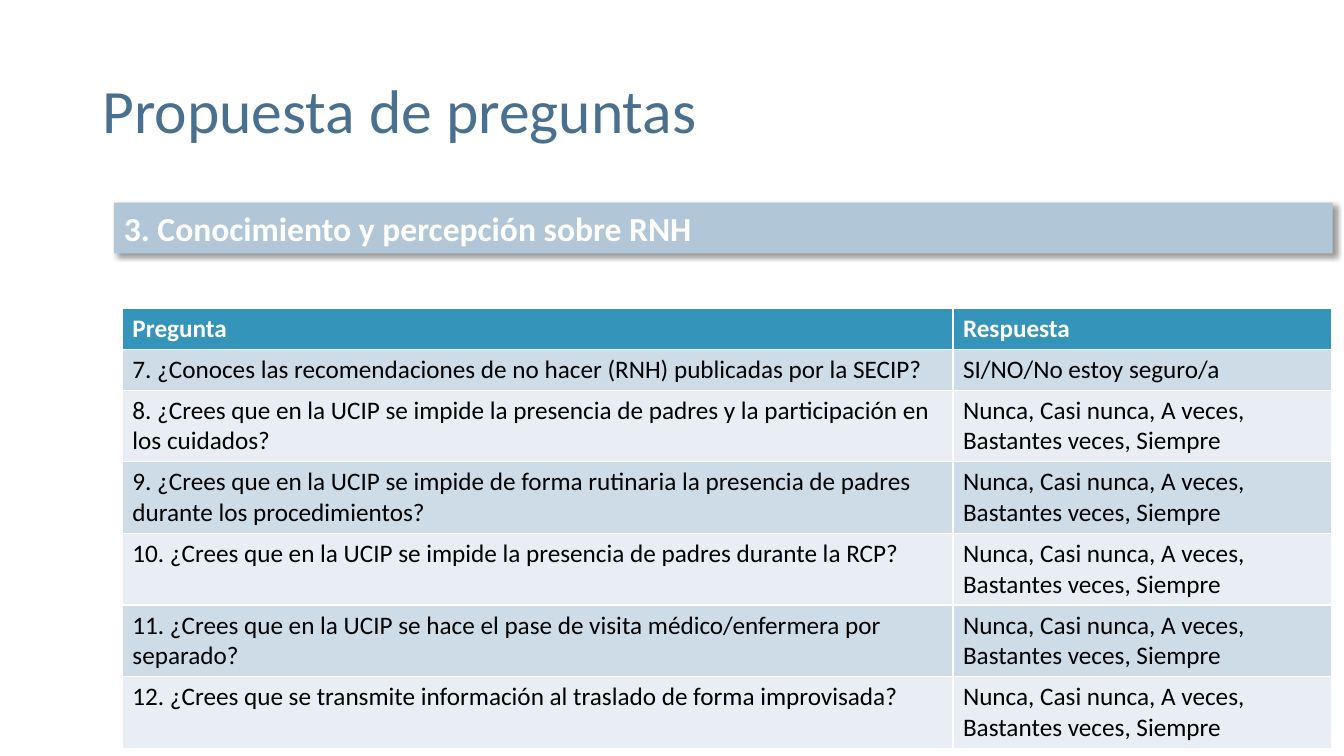
from lxml.etree import SubElement
from pptx import Presentation
from pptx.dml.color import RGBColor
from pptx.enum.shapes import MSO_SHAPE
from pptx.enum.text import MSO_ANCHOR, PP_ALIGN
from pptx.oxml.ns import qn
from pptx.util import Pt

WHITE = "FFFFFF"
BLACK = "000000"
TITLE_BLUE = "4A7090"
BAR_BLUE = "B1C6D7"
HEADER_BLUE = "3494BA"
ROW_FILLS = ("CEDCE7", "E8EEF3")

FREQUENCY = "Nunca, Casi nunca, A veces, Bastantes veces, Siempre"
HEADINGS = ("Pregunta", "Respuesta")
QUESTIONS = [
    ("¿Conoces las recomendaciones de no hacer (RNH) publicadas por la SECIP?", "SI/NO/No estoy seguro/a"),
    ("¿Crees que en la UCIP se impide la presencia de padres y la participación en los cuidados?", FREQUENCY),
    ("¿Crees que en la UCIP se impide de forma rutinaria la presencia de padres durante los procedimientos?", FREQUENCY),
    ("¿Crees que en la UCIP se impide la presencia de padres durante la RCP?", FREQUENCY),
    ("¿Crees que en la UCIP se hace el pase de visita médico/enfermera por separado?", FREQUENCY),
    ("¿Crees que se transmite información al traslado de forma improvisada?", FREQUENCY),
]
FIRST_NUMBER = 7


def color(value):
    return RGBColor.from_string(value)


def fill_solid(target, value):
    target.fill.solid()
    target.fill.fore_color.rgb = color(value)


def write_text(text_frame, text, size=18, text_color=BLACK, bold=False, line_spacing=1.0):
    paragraph = text_frame.paragraphs[0]
    paragraph.alignment = PP_ALIGN.LEFT
    paragraph.line_spacing = line_spacing
    run = paragraph.add_run()
    run.text = text
    run.font.name = "Calibri"
    run.font.size = Pt(size)
    run.font.bold = bold
    run.font.color.rgb = color(text_color)


def add_outer_shadow(shape, blur, distance, degrees, opacity):
    shape.shadow.inherit = False
    effects = shape.element.spPr.find(qn("a:effectLst"))
    shadow = SubElement(
        effects, qn("a:outerShdw"), blurRad=str(Pt(blur)), dist=str(Pt(distance)),
        dir=str(degrees * 60000), algn="tl", rotWithShape="0",
    )
    shadow_color = SubElement(shadow, qn("a:srgbClr"), val=BLACK)
    SubElement(shadow_color, qn("a:alpha"), val=str(opacity * 1000))


def place_title(slide, left, top, width, height):
    title = slide.shapes.title
    title.left, title.top, title.width, title.height = Pt(left), Pt(top), Pt(width), Pt(height)
    title.text_frame.vertical_anchor = MSO_ANCHOR.MIDDLE
    write_text(title.text_frame, "Propuesta de preguntas", size=44, text_color=TITLE_BLUE, line_spacing=0.9)


def add_section_bar(slide, left, top, width, height):
    bar = slide.shapes.add_shape(MSO_SHAPE.RECTANGLE, Pt(left), Pt(top), Pt(width), Pt(height))
    fill_solid(bar, BAR_BLUE)
    bar.line.fill.background()
    add_outer_shadow(bar, blur=4, distance=3, degrees=45, opacity=40)
    bar.text_frame.word_wrap = True
    bar.text_frame.vertical_anchor = MSO_ANCHOR.TOP
    write_text(bar.text_frame, "3. Conocimiento y percepción sobre RNH", size=24, text_color=WHITE, bold=True)


def add_question_table(slide, left, top, width, row_height, question_width):
    rows = [HEADINGS] + [
        (f"{number}. {question}", answer)
        for number, (question, answer) in enumerate(QUESTIONS, FIRST_NUMBER)
    ]
    frame = slide.shapes.add_table(
        len(rows), len(HEADINGS), Pt(left), Pt(top), Pt(width), Pt(row_height * len(rows))
    )
    table = frame.table
    table.columns[0].width = Pt(question_width)
    table.columns[1].width = Pt(width - question_width)
    for row_index, row in enumerate(rows):
        is_header = row_index == 0
        row_fill = HEADER_BLUE if is_header else ROW_FILLS[(row_index - 1) % 2]
        for column_index, text in enumerate(row):
            cell = table.cell(row_index, column_index)
            fill_solid(cell, row_fill)
            write_text(cell.text_frame, text, text_color=WHITE if is_header else BLACK, bold=is_header)


def build_question_slide(presentation):
    slide = presentation.slides.add_slide(presentation.slide_layouts[5])
    place_title(slide, 66, 28.8, 828, 104.4)
    add_section_bar(slide, 81.4, 144.7, 870.5, 36.3)
    add_question_table(slide, 87.4, 220.3, 864, 29.2, 593.3)


def main():
    presentation = Presentation()
    presentation.slide_width = Pt(960)
    presentation.slide_height = Pt(540)
    build_question_slide(presentation)
    presentation.save("out.pptx")


if __name__ == "__main__":
    main()
